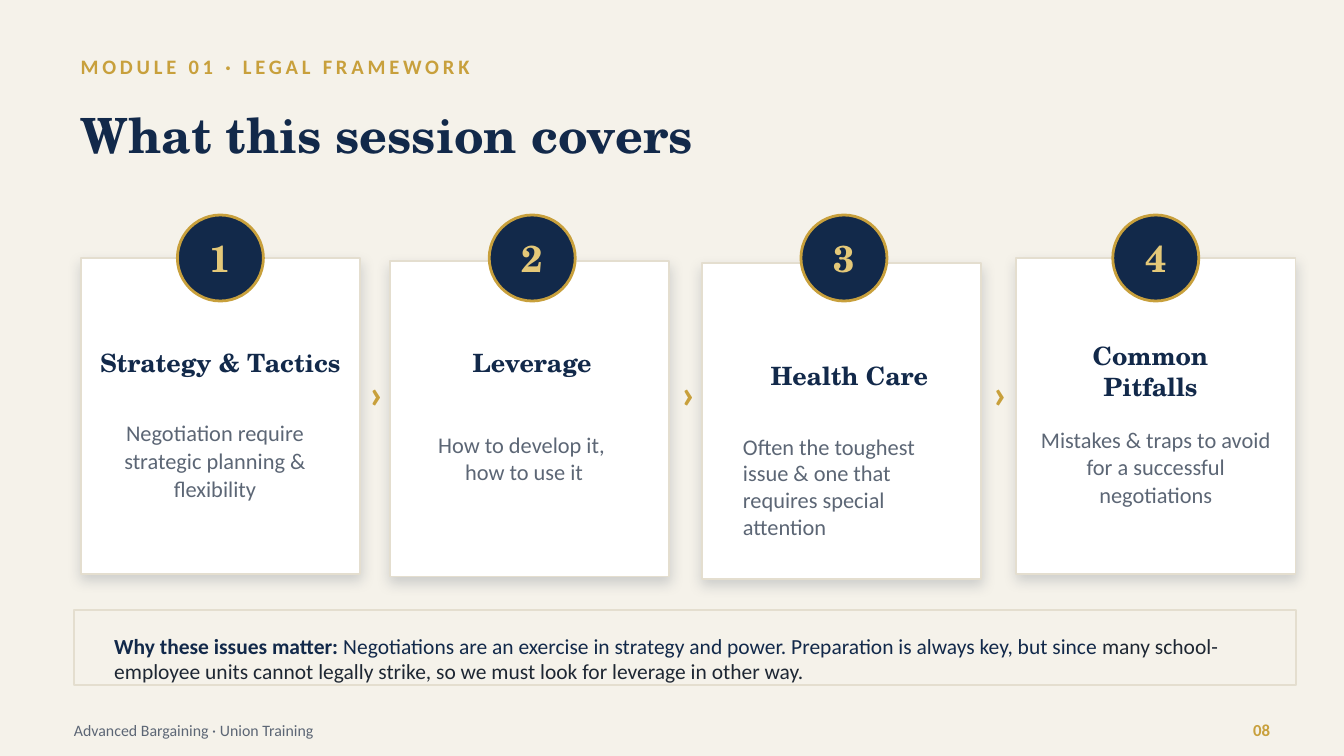
from dataclasses import dataclass

from lxml import etree
from pptx import Presentation
from pptx.dml.color import RGBColor
from pptx.enum.shapes import MSO_SHAPE
from pptx.enum.text import MSO_ANCHOR, MSO_AUTO_SIZE, PP_ALIGN
from pptx.oxml.ns import qn
from pptx.util import Inches, Pt

RECT, OVAL = MSO_SHAPE.RECTANGLE, MSO_SHAPE.OVAL
LEFT, CENTER, RIGHT = PP_ALIGN.LEFT, PP_ALIGN.CENTER, PP_ALIGN.RIGHT
TOP, MIDDLE = MSO_ANCHOR.TOP, MSO_ANCHOR.MIDDLE
NO_FIT = MSO_AUTO_SIZE.NONE

Box = tuple[float, float, float, float]


@dataclass(frozen=True)
class Theme:
    paper: str = "F5F2EA"
    white: str = "FFFFFF"
    navy: str = "12294A"
    gold: str = "C8A03C"
    pale_gold: str = "E4C878"
    border: str = "E4DECF"
    muted: str = "5C6675"
    ink: str = "1E2733"
    shadow: str = "0C1D36"
    serif: str = "TeX Gyre Schola"
    sans: str = "Calibri"
    title: float = 26
    arrow: float = 22
    number: float = 20
    heading: float = 13.5
    body: float = 12
    note: float = 11.5
    kicker: float = 11
    page: float = 9
    footer: float = 8.5


@dataclass(frozen=True)
class Run:
    text: str
    color: str
    bold: bool = False


@dataclass(frozen=True)
class Card:
    left: float
    top: float
    heading: str
    heading_at: tuple[float, float]
    detail: str
    detail_box: Box
    align: PP_ALIGN = CENTER
    anchor: MSO_ANCHOR = MIDDLE
    spacing: float | None = 1.03
    inset: tuple[float, float] = (0, 0)


T = Theme()
PITCH = 2.32
CARDS = [
    Card(0.6, 1.92, "Strategy & Tactics", (0.74, 2.4),
         "Negotiation require strategic planning & flexibility", (0.72, 2.85, 1.76, 1.15)),
    Card(2.9, 1.94, "Leverage", (3.06, 2.4),
         "How to develop it, \nhow to use it", (3.02, 3.01, 1.76, 0.79)),
    Card(5.22, 1.96, "Health Care", (5.42, 2.49),
         "Often the toughest issue & one that requires special attention",
         (5.43, 3.17, 1.76, 0.91), LEFT, TOP, None, (0.1, 0.05)),
    Card(7.56, 1.92, "Common\nPitfalls", (7.66, 2.46),
         "Mistakes & traps to avoid for a successful negotiations", (7.72, 2.98, 1.76, 0.98)),
]


def rgb(value: str) -> RGBColor:
    return RGBColor.from_string(value)


def write(sp, text: str | list[Run], *, size: float, color: str = T.navy, font: str = T.sans,
          bold: bool = False, align: PP_ALIGN = LEFT, anchor: MSO_ANCHOR = MIDDLE,
          spacing: float | None = None, tracking: float = 0,
          inset: tuple[float, float] = (0, 0)) -> None:
    tf = sp.text_frame
    tf.word_wrap, tf.auto_size, tf.vertical_anchor = True, NO_FIT, anchor
    tf.margin_left = tf.margin_right = Inches(inset[0])
    tf.margin_top = tf.margin_bottom = Inches(inset[1])
    if isinstance(text, str):
        lines = [[Run(line, color, bold)] for line in text.split("\n")]
    else:
        lines = [text]
    for i, runs in enumerate(lines):
        p = tf.paragraphs[0] if i == 0 else tf.add_paragraph()
        p.alignment = align
        if spacing:
            p.line_spacing = spacing
        for run in runs:
            r = p.add_run()
            r.text = run.text
            r.font.name, r.font.size, r.font.bold = font, Pt(size), run.bold
            r.font.color.rgb = rgb(run.color)
            if tracking:
                r.font._element.set("spc", str(int(tracking * 100)))


def add_text(s, box: Box, text: str | list[Run], **style) -> None:
    write(s.shapes.add_textbox(*map(Inches, box)), text, **style)


def add_shape(s, kind: MSO_SHAPE, box: Box, fill: str, line: str, width: float = 1):
    sp = s.shapes.add_shape(kind, *map(Inches, box))
    sp.shadow.inherit = False
    sp.fill.solid()
    sp.fill.fore_color.rgb = rgb(fill)
    sp.line.color.rgb = rgb(line)
    sp.line.width = Pt(width)
    return sp


def add_shadow(sp) -> None:
    effects = sp._element.spPr.find(qn("a:effectLst"))
    shadow = etree.SubElement(effects, qn("a:outerShdw"), blurRad=str(Pt(7)), dist=str(Pt(3)),
                              dir="5400000", algn="bl", rotWithShape="0")
    color = etree.SubElement(shadow, qn("a:srgbClr"), val=T.shadow)
    etree.SubElement(color, qn("a:alpha"), val="16000")


def add_card(s, index: int, card: Card) -> None:
    add_shadow(add_shape(s, RECT, (card.left, card.top, 2.08, 2.35), T.white, T.border))
    badge = (1.32 + index * PITCH, 1.6, 0.64, 0.64)
    add_shape(s, OVAL, badge, T.navy, T.gold, 1.5)
    add_text(s, badge, str(index + 1), size=T.number, color=T.pale_gold, font=T.serif,
             bold=True, align=CENTER)
    add_text(s, (*card.heading_at, 1.8, 0.6), card.heading, size=T.heading, font=T.serif,
             bold=True, align=CENTER)
    add_text(s, card.detail_box, card.detail, size=T.body, color=T.muted, align=card.align,
             anchor=card.anchor, spacing=card.spacing, inset=card.inset)


def main() -> None:
    prs = Presentation()
    prs.slide_width = Inches(10)
    prs.slide_height = prs.slide_width * 9 // 16
    s = prs.slides.add_slide(prs.slide_layouts[5])
    s.background.fill.solid()
    s.background.fill.fore_color.rgb = rgb(T.paper)

    add_text(s, (0.6, 0.34, 8.8, 0.3), "MODULE 01 · LEGAL FRAMEWORK", size=T.kicker,
             color=T.gold, bold=True, tracking=2)
    title = s.shapes.title
    title.left, title.top, title.width, title.height = map(Inches, (0.6, 0.62, 8.8, 0.75))
    write(title, "What this session covers", size=T.title, font=T.serif, bold=True)

    for i, card in enumerate(CARDS):
        add_card(s, i, card)
    for i in range(len(CARDS) - 1):
        add_text(s, (2.66 + i * PITCH, 2.62, 0.28, 0.6), "›", size=T.arrow, color=T.gold,
                 bold=True, align=CENTER)

    add_shape(s, RECT, (0.55, 4.54, 9.09, 0.56), T.paper, T.border)
    add_text(s, (0.85, 4.62, 8.63, 0.56), [
        Run("Why these issues matter: ", T.navy, True),
        Run("Negotiations are an exercise in strategy and power. "
            "Preparation is always key, but since ", T.navy),
        Run("many school-employee units cannot legally strike, "
            "so we must look for leverage in other way.", T.ink),
    ], size=T.note)
    add_text(s, (0.55, 5.28, 6.5, 0.3), "Advanced Bargaining · Union Training",
             size=T.footer, color=T.muted)
    add_text(s, (9, 5.28, 0.45, 0.3), "08", size=T.page, color=T.gold, bold=True, align=RIGHT)
    prs.save("out.pptx")


if __name__ == "__main__":
    main()
